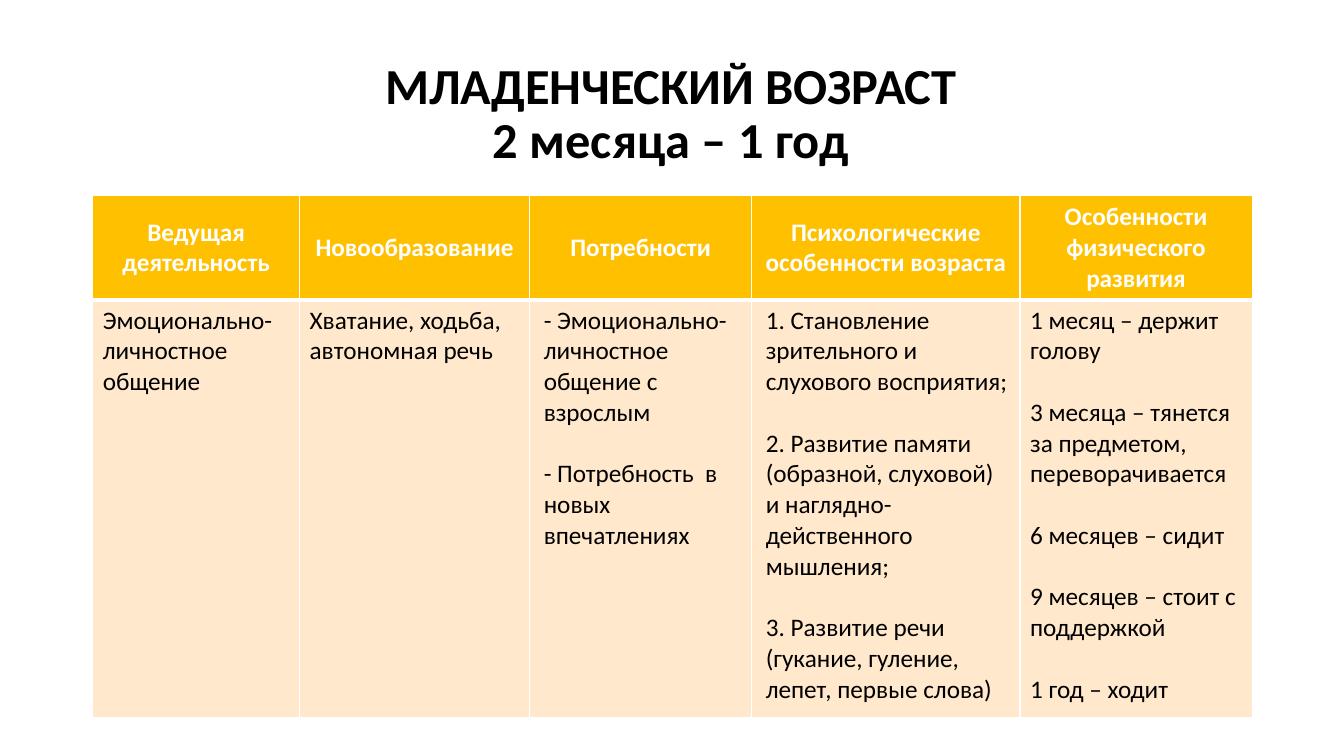
from copy import deepcopy
from lxml.etree import SubElement
from pptx import Presentation
from pptx.dml.color import RGBColor
from pptx.enum.text import MSO_ANCHOR, MSO_AUTO_SIZE, PP_ALIGN
from pptx.oxml.ns import qn
from pptx.util import Inches, Pt

WIDE, HIGH = Inches(13.33), Inches(7.5)
BLACK = RGBColor(0, 0, 0)
WHITE = RGBColor(255, 255, 255)
GOLD = RGBColor(255, 192, 0)
CREAM = RGBColor(255, 232, 204)

TITLE = "МЛАДЕНЧЕСКИЙ ВОЗРАСТ\v2 месяца – 1 год"
COLUMNS = [
    ("Ведущая деятельность", 2.05, 0, ["Эмоционально-личностное общение"]),
    ("Новообразование", 2.28, 0, ["Хватание, ходьба, автономная речь"]),
    ("Потребности", 2.2, 0.04, [
        "- Эмоционально-личностное общение с взрослым",
        "- Потребность  в новых впечатлениях"]),
    ("Психологические особенности возраста", 2.66, 0.04, [
        "1. Становление зрительного и слухового восприятия;",
        "2. Развитие памяти (образной, слуховой) и наглядно-действенного мышления;",
        "3. Развитие речи (гукание, гуление, лепет, первые слова)"]),
    ("Особенности физического развития", 2.3, 0, [
        "1 месяц – держит голову",
        "3 месяца – тянется за предметом, переворачивается",
        "6 месяцев – сидит",
        "9 месяцев – стоит с поддержкой",
        "1 год – ходит"]),
]


def area(left, top, width, height):
    return (int(WIDE * left / 100), int(HIGH * top / 100),
            int(WIDE * width / 100), int(HIGH * height / 100))


def write(frame, lines, size=18, color=BLACK, bold=False,
          align=PP_ALIGN.LEFT, space=None, gap=0, indent=0):
    for index, line in enumerate(lines):
        para = frame.add_paragraph() if index else frame.paragraphs[0]
        para.text = line
        para.alignment = align
        para.line_spacing = space
        para.space_before = Pt(gap if index else 0)
        if indent:
            props = para._p.get_or_add_pPr()
            props.set("marL", str(Inches(indent)))
            props.set("indent", "0")
        for run in para.runs:
            font = run.font
            font.name, font.size, font.bold = "Calibri", Pt(size), bold
            font.color.rgb = color
        for pause in para._p.findall(qn("a:br")):
            pause.append(deepcopy(para.runs[0]._r.rPr))


def border(cell, **widths):
    props = cell._tc.get_or_add_tcPr()
    for side in "LRTB":
        line = SubElement(props, qn("a:ln" + side), w=str(Pt(widths.get(side, 1))))
        fill = SubElement(line, qn("a:solidFill"))
        SubElement(fill, qn("a:srgbClr"), val=str(WHITE))


def paint(cell, color, anchor, **widths):
    border(cell, **widths)
    cell.fill.solid()
    cell.fill.fore_color.rgb = color
    cell.vertical_anchor = anchor


def heading(slide, box):
    title = slide.shapes.title
    title.left, title.top, title.width, title.height = box
    frame = title.text_frame
    frame.word_wrap = True
    frame.auto_size = MSO_AUTO_SIZE.NONE
    frame.vertical_anchor = MSO_ANCHOR.MIDDLE
    write(frame, [TITLE], size=36, bold=True, align=PP_ALIGN.CENTER, space=0.9)


def grid(slide, box):
    width, height = box[2:]
    table = slide.shapes.add_table(2, len(COLUMNS), *box).table
    table.rows[0].height = int(height * 0.2)
    table.rows[1].height = height - table.rows[0].height
    total = sum(column[1] for column in COLUMNS)
    for index, (head, share, indent, items) in enumerate(COLUMNS):
        table.columns[index].width = int(width * share / total)
        top, body = table.cell(0, index), table.cell(1, index)
        paint(top, GOLD, MSO_ANCHOR.MIDDLE, B=3)
        write(top.text_frame, [head], color=WHITE, bold=True, align=PP_ALIGN.CENTER)
        paint(body, CREAM, MSO_ANCHOR.TOP, T=3)
        write(body.text_frame, items, gap=22, indent=indent)


def main():
    deck = Presentation()
    deck.slide_width, deck.slide_height = WIDE, HIGH
    slide = deck.slides.add_slide(deck.slide_layouts[5])
    heading(slide, area(19.28, 6.93, 61.29, 16.67))
    grid(slide, area(6.9, 25.87, 86.27, 69.07))
    deck.save("out.pptx")


if __name__ == "__main__":
    main()
